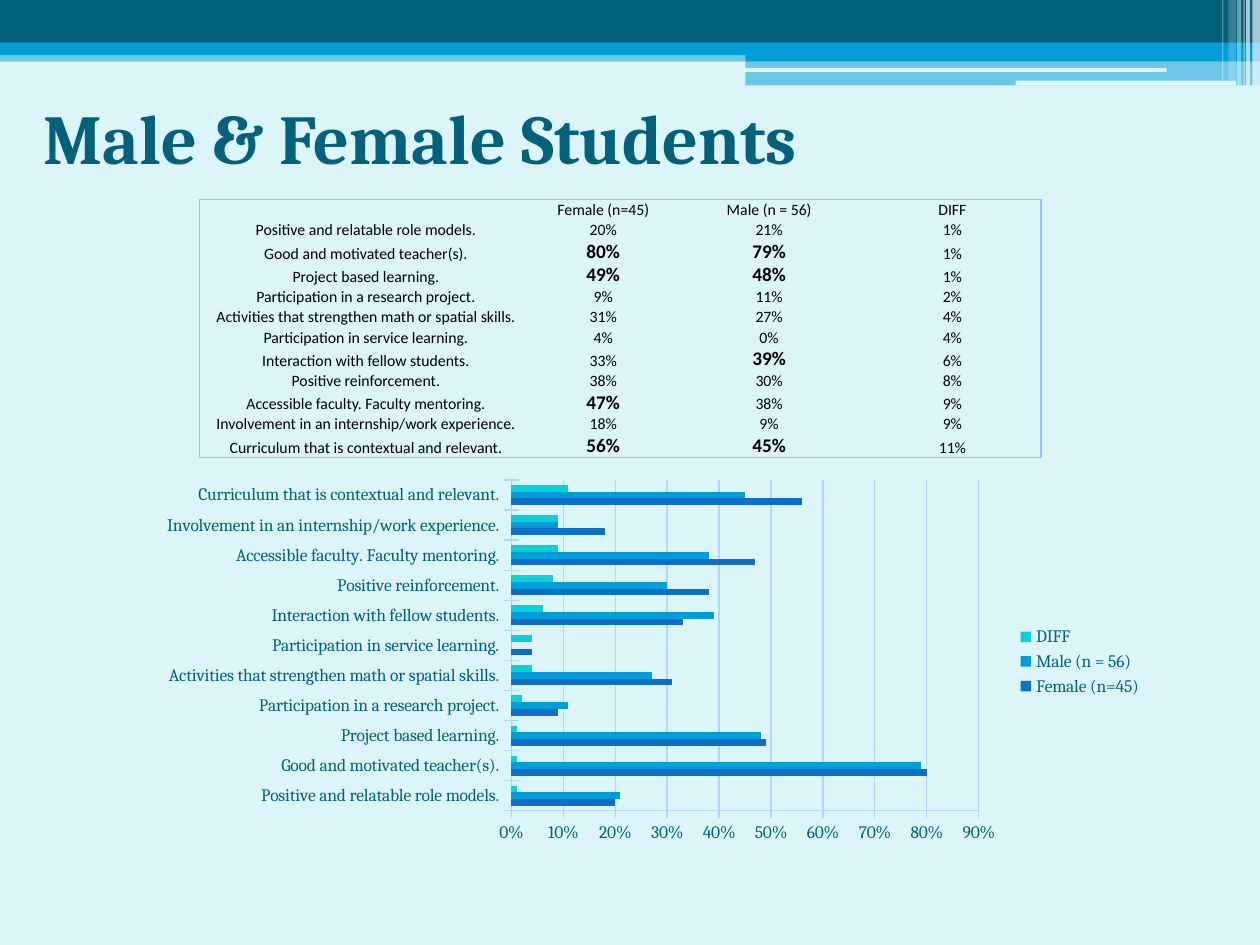
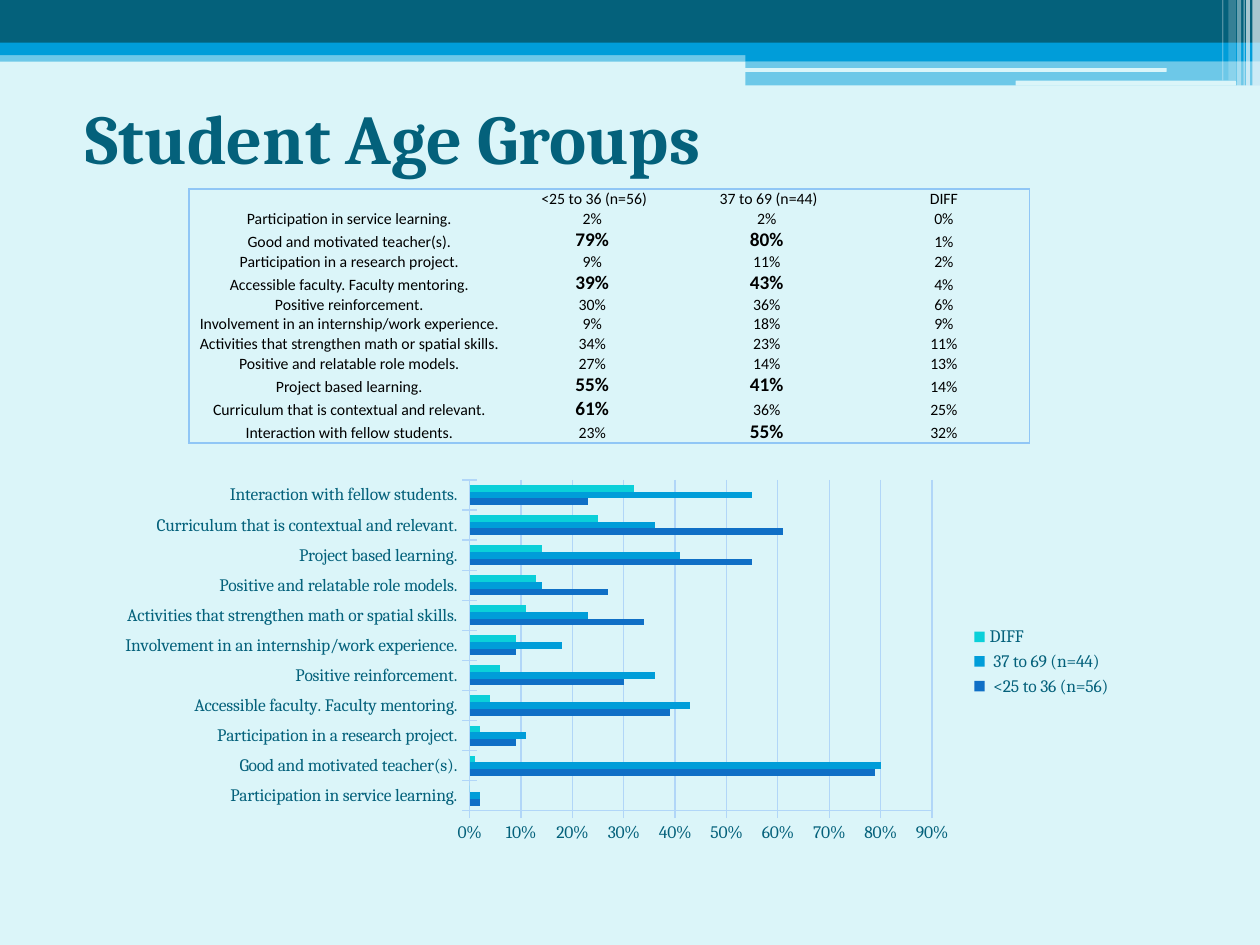
from dataclasses import dataclass
from lxml.etree import SubElement
from pptx import Presentation
from pptx.chart.data import CategoryChartData
from pptx.dml.color import RGBColor
from pptx.enum.chart import XL_CHART_TYPE, XL_LEGEND_POSITION, XL_TICK_MARK
from pptx.enum.shapes import MSO_SHAPE
from pptx.enum.text import MSO_ANCHOR, PP_ALIGN
from pptx.oxml.ns import qn
from pptx.util import Pt


@dataclass(frozen=True)
class Theme:
    """Colours, fonts and type sizes of the deck."""
    back: str = "DBF5F9"
    dark: str = "04617B"
    blue: str = "009DD9"
    white: str = "FFFFFF"
    black: str = "000000"
    border: str = "90C6F6"
    grid: str = "B1D6F8"
    series: tuple = ("0F6FC6", "009DD9", "0BD0D9")
    head_font: str = "Cambria"
    cell_font: str = "Calibri"
    title: int = 40
    chart: int = 10
    cell: int = 9
    cell_strong: int = 11


T = Theme()
STRONG_FROM = 39
NO_STYLE = "{2D5ABB26-0587-4C30-8999-92F81FD0307C}"

ROLE = "Positive and relatable role models."
TEACHER = "Good and motivated teacher(s)."
PROJECT = "Project based learning."
RESEARCH = "Participation in a research project."
SKILLS = "Activities that strengthen math or spatial skills."
SERVICE = "Participation in service learning."
STUDENTS = "Interaction with fellow students."
REINFORCE = "Positive reinforcement."
FACULTY = "Accessible faculty. Faculty mentoring."
INTERN = "Involvement in an internship/work experience."
CURRICULUM = "Curriculum that is contextual and relevant."

GENDER = [
    (ROLE, 20, 21), (TEACHER, 80, 79), (PROJECT, 49, 48), (RESEARCH, 9, 11),
    (SKILLS, 31, 27), (SERVICE, 4, 0), (STUDENTS, 33, 39), (REINFORCE, 38, 30),
    (FACULTY, 47, 38), (INTERN, 18, 9), (CURRICULUM, 56, 45),
]
AGE = [
    (SERVICE, 2, 2), (TEACHER, 79, 80), (RESEARCH, 9, 11), (FACULTY, 39, 43),
    (REINFORCE, 30, 36), (INTERN, 9, 18), (SKILLS, 34, 23), (ROLE, 27, 14),
    (PROJECT, 55, 41), (CURRICULUM, 61, 36), (STUDENTS, 23, 55),
]

BARS = [
    (0, 28.8, 720, 6.5, T.blue, 50),
    (0, 0, 720, 24.5, T.dark, 100),
    (0, 24.4, 720, 7.2, T.blue, 100),
    (426, 28, 294, 7, T.blue, 100),
    (426, 34.9, 294, 14, T.blue, 50),
]
SLITS = [(425.5, 38.9, 241.2, 2.2), (580.3, 46.1, 126, 2.9)]
STRIPES = [
    (715.7, 4.3, 49, 65), (712.1, 2.2, 49, 65), (710.6, 0.72, 49, 60),
    (707, 2.2, 49, 40), (702, 4.3, 46, 20), (698.4, 0.72, 46, 30),
]


def rgb(color):
    """Turn a hex string into a colour."""
    return RGBColor.from_string(color)


def style(font, name, size, color, bold=False):
    """Set the face, size, colour and weight of a font."""
    font.name, font.size, font.bold = name, Pt(size), bold
    font.color.rgb = rgb(color)


def bar(s, box, color, opacity=100, kind=MSO_SHAPE.RECTANGLE):
    """Add a plain filled bar without outline."""
    sp = s.shapes.add_shape(kind, *map(Pt, box))
    sp.shadow.inherit = False
    sp.line.fill.background()
    sp.fill.solid()
    sp.fill.fore_color.rgb = rgb(color)
    if opacity < 100:
        clr = sp.fill._xPr.find(qn("a:solidFill"))[0]
        SubElement(clr, qn("a:alpha"), val=str(opacity * 1000))


def header(s):
    """Paint the background and the layered band along the top."""
    s.background.fill.solid()
    s.background.fill.fore_color.rgb = rgb(T.back)
    for *box, color, opacity in BARS:
        bar(s, box, color, opacity)
    for box in SLITS:
        bar(s, box, T.back, kind=MSO_SHAPE.ROUNDED_RECTANGLE)
    for x, w, h, opacity in STRIPES:
        bar(s, (x, 0, w, h), T.white, opacity)


def title(s, box, text):
    """Add the slide title."""
    tf = s.shapes.add_textbox(*map(Pt, box)).text_frame
    tf.word_wrap = True
    tf.vertical_anchor = MSO_ANCHOR.MIDDLE
    p = tf.paragraphs[0]
    p.text = text
    style(p.font, T.head_font, T.title, T.dark, True)


def edge(cell, side):
    """Draw one border line of a cell."""
    ln = SubElement(cell._tc.get_or_add_tcPr(), qn(f"a:ln{side}"), w=str(Pt(1)))
    fill = SubElement(ln, qn("a:solidFill"))
    SubElement(fill, qn("a:srgbClr"), val=T.border)


def table(s, left, top, widths, row_height, names, data):
    """Add the table of shares, with high shares emphasised."""
    rows = [("", *names)] + [(label, a, b, abs(a - b)) for label, a, b in data]
    frame = s.shapes.add_table(len(rows), len(widths), Pt(left), Pt(top),
                               Pt(sum(widths)), Pt(row_height * len(rows)))
    tbl = frame.table
    tbl.first_row = tbl.horz_banding = False
    tbl._tbl.tblPr.find(qn("a:tableStyleId")).text = NO_STYLE
    for col, width in zip(tbl.columns, widths):
        col.width = Pt(width)
    for i, row in enumerate(rows):
        tbl.rows[i].height = Pt(row_height)
        for j, value in enumerate(row):
            cell = tbl.cell(i, j)
            sides = {"L": j == 0, "R": j == len(row) - 1,
                     "T": i == 0, "B": i == len(rows) - 1}
            for side, outer in sides.items():
                if outer:
                    edge(cell, side)
            cell.fill.background()
            cell.margin_left = cell.margin_right = 0
            cell.margin_top = cell.margin_bottom = 0
            cell.vertical_anchor = MSO_ANCHOR.BOTTOM
            number = isinstance(value, int)
            strong = number and j < 3 and value >= STRONG_FROM
            p = cell.text_frame.paragraphs[0]
            p.text = f"{value}%" if number else value
            p.alignment = PP_ALIGN.CENTER
            style(p.font, T.cell_font, T.cell_strong if strong else T.cell,
                  T.black, strong)


def chart(s, box, names, data):
    """Add the clustered bar chart of the same shares."""
    cd = CategoryChartData(number_format="0%")
    cd.categories = [label for label, _, _ in data]
    columns = zip(*((a, b, abs(a - b)) for _, a, b in data))
    for name, values in zip(names, columns):
        cd.add_series(name, [v / 100 for v in values])
    ch = s.shapes.add_chart(XL_CHART_TYPE.BAR_CLUSTERED, *map(Pt, box), cd).chart
    style(ch.font, T.head_font, T.chart, T.dark)
    ch.has_title = False
    ch.has_legend = True
    ch.legend.position = XL_LEGEND_POSITION.RIGHT
    ch.legend.include_in_layout = False
    plot = ch.plots[0]
    plot.gap_width, plot.overlap = 150, 0
    plot.vary_by_categories = False
    for series, color in zip(plot.series, T.series):
        series.format.fill.solid()
        series.format.fill.fore_color.rgb = rgb(color)
    axis = ch.value_axis
    axis.minimum_scale, axis.maximum_scale, axis.major_unit = 0, 0.9, 0.1
    axis.has_major_gridlines = True
    axis.tick_labels.number_format = "0%"
    axis.tick_labels.number_format_is_linked = False
    for ax in (axis, ch.category_axis):
        ax.major_tick_mark = XL_TICK_MARK.CROSS
    for part in (axis, ch.category_axis, axis.major_gridlines):
        part.format.line.color.rgb = rgb(T.grid)
        part.format.line.width = Pt(0.75)


def main():
    """Build the two comparison slides."""
    prs = Presentation()
    prs.slide_width, prs.slide_height = Pt(720), Pt(540)
    blank = prs.slide_layouts[6]

    s = prs.slides.add_slide(blank)
    header(s)
    names = ("Female (n=45)", "Male (n = 56)", "DIFF")
    title(s, (18, 36, 690, 84), "Male & Female Students")
    chart(s, (84, 270, 576, 216), names, GENDER)
    table(s, 114, 114, (190, 81.5, 108, 101.5), 11.6, names, GENDER)

    s = prs.slides.add_slide(blank)
    header(s)
    names = (" <25 to 36 (n=56)", " 37 to 69 (n=44)", "DIFF")
    title(s, (42, 36, 660, 84), "Student Age Groups")
    table(s, 108, 108, (183, 95, 104.4, 98), 11.3, names, AGE)
    chart(s, (60, 270, 582.5, 216), names, AGE)

    prs.save("out.pptx")


if __name__ == "__main__":
    main()
